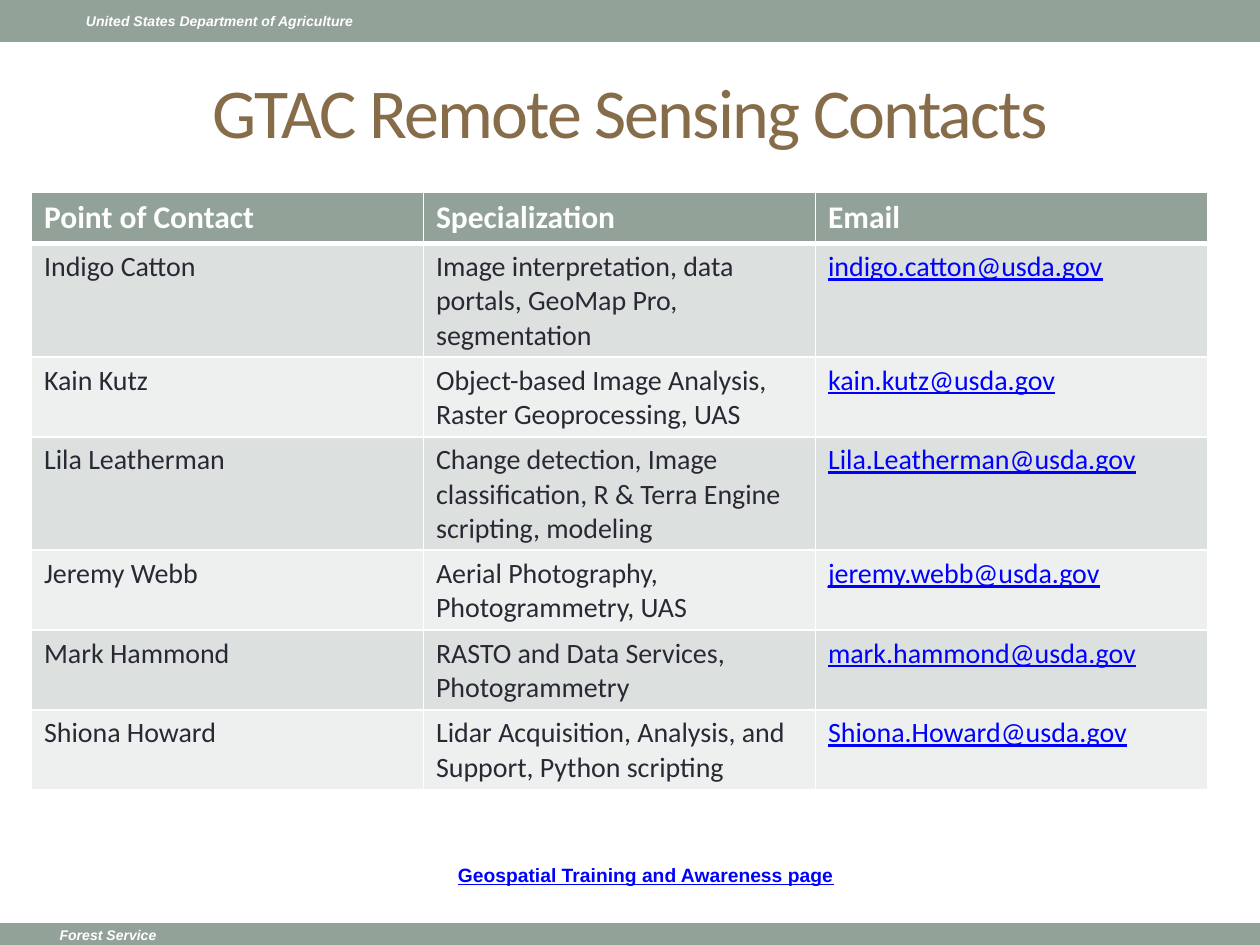
from dataclasses import dataclass

from pptx import Presentation
from pptx.dml.color import RGBColor
from pptx.enum.shapes import MSO_SHAPE as Shape
from pptx.enum.text import MSO_ANCHOR as Anchor, PP_ALIGN as Align
from pptx.oxml.ns import qn
from pptx.util import Pt
from lxml.etree import SubElement

SAGE, WHITE, BROWN, INK, LINK = "93A299", "FFFFFF", "866C49", "292934", "0000FF"
BANDS = ("DCE0DE", "EEF0EF")


@dataclass
class Box:
    left: float
    top: float
    width: float
    height: float

    def points(self):
        return [Pt(n) for n in (self.left, self.top, self.width, self.height)]


@dataclass
class Contact:
    name: str
    specialization: str
    email: str


HEADINGS = ("Point of Contact", "Specialization", "Email")
CONTACTS = [
    Contact("Indigo Catton", "Image interpretation, data portals, GeoMap Pro, segmentation",
            "indigo.catton@usda.gov"),
    Contact("Kain Kutz", "Object-based Image Analysis, Raster Geoprocessing, UAS",
            "kain.kutz@usda.gov"),
    Contact("Lila Leatherman",
            "Change detection, Image classification, R & Terra Engine scripting, modeling",
            "Lila.Leatherman@usda.gov"),
    Contact("Jeremy Webb", "Aerial Photography, Photogrammetry, UAS", "jeremy.webb@usda.gov"),
    Contact("Mark Hammond", "RASTO and Data Services, Photogrammetry", "mark.hammond@usda.gov"),
    Contact("Shiona Howard", "Lidar Acquisition, Analysis, and Support, Python scripting",
            "Shiona.Howard@usda.gov"),
]


def color(hex_text: str) -> RGBColor:
    return RGBColor.from_string(hex_text)


def write(frame, text: str, *, size, fill, font="Calibri", bold=False, italic=False,
          underline=False, align=Align.LEFT, spacing=0) -> None:
    frame.word_wrap = True
    paragraph = frame.paragraphs[0]
    paragraph.alignment = align
    run = paragraph.add_run()
    run.text = text
    run.font.name, run.font.size = font, Pt(size)
    run.font.bold, run.font.italic, run.font.underline = bold, italic, underline
    run.font.color.rgb = color(fill)
    if spacing:
        run.font._element.set("spc", str(spacing * 100))


def add_bar(slide, box: Box) -> None:
    bar = slide.shapes.add_shape(Shape.RECTANGLE, *box.points())
    bar.shadow.inherit = False
    bar.fill.solid()
    bar.fill.fore_color.rgb = color(SAGE)
    bar.line.fill.background()


def add_text(slide, box: Box, text: str, anchor=Anchor.TOP, **style) -> None:
    frame = slide.shapes.add_textbox(*box.points()).text_frame
    frame.vertical_anchor = anchor
    write(frame, text, **style)


def style_cell(cell, fill: str, top: float, bottom: float) -> None:
    # Borders come before the fill in the cell properties
    properties = cell._tc.get_or_add_tcPr()
    for side, width in (("L", 1), ("R", 1), ("T", top), ("B", bottom)):
        line = SubElement(properties, qn(f"a:ln{side}"), w=str(Pt(width)))
        SubElement(SubElement(line, qn("a:solidFill")), qn("a:srgbClr"), val=WHITE)
    cell.fill.solid()
    cell.fill.fore_color.rgb = color(fill)


def add_contacts(slide, box: Box) -> None:
    rows = [HEADINGS] + [(c.name, c.specialization, c.email) for c in CONTACTS]
    table = slide.shapes.add_table(len(rows), len(HEADINGS), *box.points()).table
    for column in table.columns:
        column.width = Pt(box.width / len(HEADINGS))
    for i, texts in enumerate(rows):
        table.rows[i].height = Pt(box.height / len(rows))
        for j, text in enumerate(texts):
            cell = table.cell(i, j)
            is_email = i > 0 and j == 2
            if i == 0:
                style_cell(cell, SAGE, top=1, bottom=3)
                write(cell.text_frame, text, size=18, fill=WHITE, bold=True)
            else:
                style_cell(cell, BANDS[(i - 1) % 2], top=3 if i == 1 else 1, bottom=1)
                write(cell.text_frame, text, size=16, fill=LINK if is_email else INK,
                      underline=is_email)


def main() -> None:
    presentation = Presentation()
    presentation.slide_width, presentation.slide_height = Pt(720), Pt(540)
    slide = presentation.slides.add_slide(presentation.slide_layouts[6])

    # Header and footer bands
    label = dict(size=8, fill=WHITE, font="Arial", bold=True, italic=True)
    add_bar(slide, Box(0, 527.5, 720, 14.5))
    add_bar(slide, Box(0, 0, 720, 24))
    add_text(slide, Box(27, 526, 147, 17), "Forest Service", **label)
    add_text(slide, Box(42, 3.5, 168, 17), "United States Department of Agriculture", **label)

    # Title
    add_text(slide, Box(36, 24, 648, 78), "GTAC Remote Sensing Contacts", Anchor.MIDDLE,
             size=40, fill=BROWN, align=Align.CENTER, spacing=-1)

    # Training page line
    add_text(slide, Box(60, 489.5, 618, 21), "Geospatial Training and Awareness page",
             size=11, fill=LINK, font="Arial", bold=True, underline=True, align=Align.CENTER)

    # Contacts
    add_contacts(slide, Box(18, 110, 672, 204.4))

    presentation.save("out.pptx")


if __name__ == "__main__":
    main()
